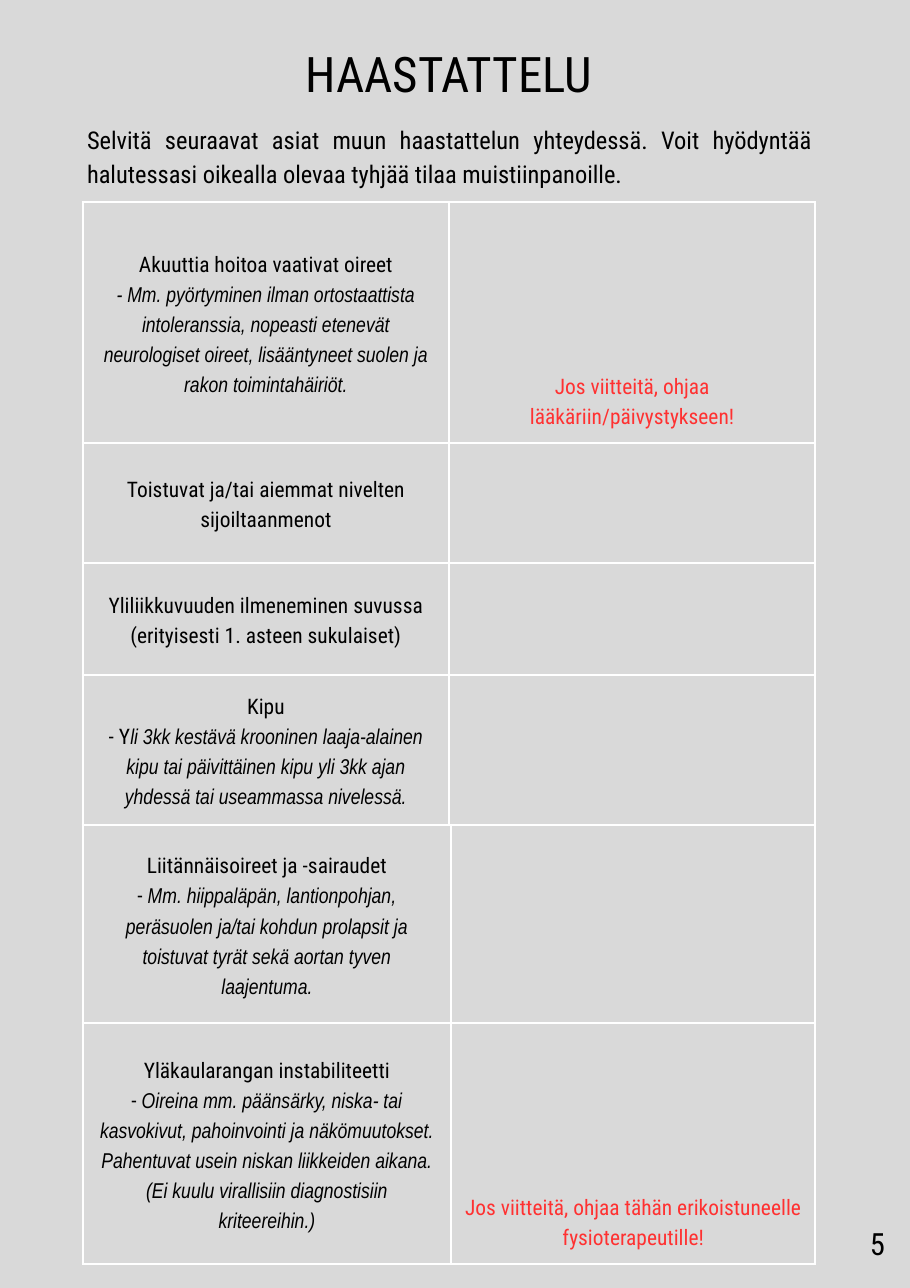
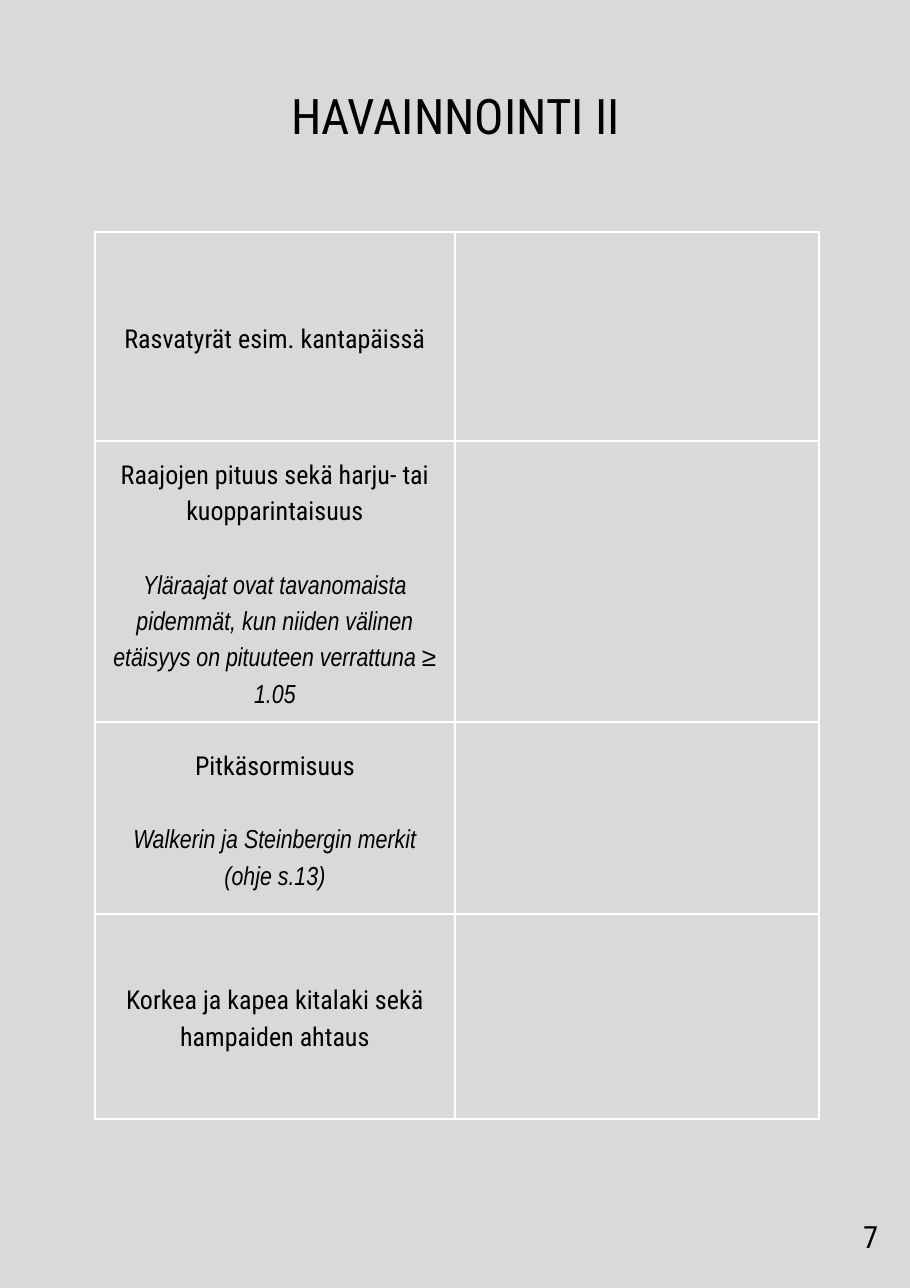
from lxml import etree
from pptx import Presentation
from pptx.dml.color import RGBColor
from pptx.enum import text
from pptx.oxml import ns
from pptx.util import Pt

GREY, WHITE, BLACK, RED = "D9D9D9", "FFFFFF", "000000", "FF3131"
UPRIGHT, SLANTED = "Roboto Condensed", "Arial Narrow"
LEADING = 1.4
CELL_MARGIN = 8.64
CENTER, JUSTIFY = text.PP_ALIGN.CENTER, text.PP_ALIGN.JUSTIFY


def write(frame, paragraphs, size, color=BLACK, align=CENTER):
    frame.word_wrap = True
    for index, (upright, slanted, gap_lines) in enumerate(paragraphs):
        para = frame.paragraphs[0] if index == 0 else frame.add_paragraph()
        para.alignment = align
        para.line_spacing = Pt(size * LEADING)
        para.space_before = Pt(size * LEADING * gap_lines)
        para.font.name = UPRIGHT
        para.font.size = Pt(size)
        para.font.color.rgb = RGBColor.from_string(color)
        if upright:
            para.add_run().text = upright
        if slanted:
            span = para.add_run()
            span.text = slanted
            span.font.name = SLANTED
            span.font.italic = True


def place(box, left, top, width, height):
    box.left, box.top, box.width, box.height = Pt(left), Pt(top), Pt(width), Pt(height)
    frame = box.text_frame
    frame.margin_left = frame.margin_right = frame.margin_top = frame.margin_bottom = 0
    frame.vertical_anchor = text.MSO_ANCHOR.TOP
    frame.auto_size = text.MSO_AUTO_SIZE.NONE
    return frame


interview_tables = [
    (54, 132.3, (239.6, 239.2), [
        (157, [("Akuuttia hoitoa vaativat oireet", "", 0),
               ("", "- Mm. pyörtyminen ilman ortostaattista intoleranssia, nopeasti etenevät "
                    "neurologiset oireet, lisääntyneet suolen ja rakon toimintahäiriöt.", 0)],
         "Jos viitteitä, ohjaa lääkäriin/päivystykseen!"),
        (78.4, [("Toistuvat ja/tai aiemmat nivelten sijoiltaanmenot", "", 0)], ""),
        (73.2, [("Yliliikkuvuuden ilmeneminen suvussa (erityisesti 1. asteen sukulaiset)", "", 0)], ""),
        (98, [("Kipu", "", 0),
              ("- Y", "li 3kk kestävä krooninen laaja-alainen kipu tai päivittäinen kipu "
                      "yli 3kk ajan yhdessä tai useammassa nivelessä.", 0)], ""),
    ]),
    (54, 538.8, (241, 237.8), [
        (129.6, [("Liitännäisoireet ja -sairaudet", "", 0),
                 ("-", " Mm. hiippaläpän, lantionpohjan, peräsuolen ja/tai kohdun prolapsit "
                       "ja toistuvat tyrät sekä aortan tyven laajentuma.", 0)], ""),
        (157.5, [("Yläkaularangan instabiliteetti", "", 0),
                 ("-", " Oireina mm. päänsärky, niska- tai kasvokivut, pahoinvointi ja "
                       "näkömuutokset. Pahentuvat usein niskan liikkeiden aikana.", 0),
                 ("", "(Ei kuulu virallisiin diagnostisiin kriteereihin.)", 0)],
         "Jos viitteitä, ohjaa tähän erikoistuneelle fysioterapeutille!"),
    ]),
]
observation_tables = [
    (62, 151.8, (235.4, 238), [
        (136.3, [("Rasvatyrät esim. kantapäissä", "", 0)], ""),
        (183.6, [("Raajojen pituus sekä harju- tai kuopparintaisuus", "", 0),
                 ("", "Yläraajat ovat tavanomaista pidemmät, kun niiden välinen "
                      "etäisyys on pituuteen verrattuna ≥ 1.05", 1)], ""),
    ]),
    (62, 471.9, (235.4, 238), [
        (125.3, [("Pitkäsormisuus", "", 0),
                 ("", "Walkerin ja Steinbergin merkit", 1),
                 ("", "(ohje s.13)", 0)], ""),
        (134, [("Korkea ja kapea kitalaki sekä hampaiden ahtaus", "", 0)], ""),
    ]),
]
intro = ("Selvitä seuraavat asiat muun haastattelun yhteydessä. Voit hyödyntää "
         "halutessasi oikealla olevaa tyhjää tilaa muistiinpanoille.")
pages = [
    ("HAASTATTELU", (40.3, 22.3), intro, interview_tables, 14, "5", (567.4, 796.3)),
    ("HAVAINNOINTI II", (44.6, 49.7), "", observation_tables, 17, "7", (563, 792)),
]

deck = Presentation()
deck.slide_width, deck.slide_height = Pt(594.72), Pt(841.68)
backdrop = deck.slide_master.background.fill
backdrop.solid()
backdrop.fore_color.rgb = RGBColor.from_string(GREY)

for heading, heading_at, lead, tables, size, number, number_at in pages:
    page = deck.slides.add_slide(deck.slide_layouts[5])
    write(place(page.shapes.title, *heading_at, 506.2, 47.5), [(heading, "", 0)], 32)
    if lead:
        box = page.shapes.add_textbox(0, 0, 0, 0)
        write(place(box, 56.9, 78.5, 473.8, 45.4), [(lead, "", 0)], 16, align=JUSTIFY)

    for left, top, widths, rows in tables:
        total_height = sum(row[0] for row in rows)
        table = page.shapes.add_table(len(rows), 2, Pt(left), Pt(top),
                                      Pt(sum(widths)), Pt(total_height)).table
        table.first_row = table.horz_banding = False
        for column, width in zip(table.columns, widths):
            column.width = Pt(width)
        for index, (height, topic, warning) in enumerate(rows):
            table.rows[index].height = Pt(height)
            topic_cell, notes_cell = table.cell(index, 0), table.cell(index, 1)
            write(topic_cell.text_frame, topic, size)
            topic_cell.vertical_anchor = text.MSO_ANCHOR.MIDDLE
            if warning:
                write(notes_cell.text_frame, [(warning, "", 0)], size, RED)
                notes_cell.vertical_anchor = text.MSO_ANCHOR.BOTTOM
        for cell in table.iter_cells():
            cell.margin_left = cell.margin_right = Pt(CELL_MARGIN)
            cell.margin_top = cell.margin_bottom = Pt(CELL_MARGIN)
            cell.fill.background()
            properties = cell._tc.get_or_add_tcPr()
            for position, side in enumerate(("lnL", "lnR", "lnT", "lnB")):
                line = etree.Element(ns.qn(f"a:{side}"), w=str(Pt(1.5)))
                paint = etree.SubElement(line, ns.qn("a:solidFill"))
                etree.SubElement(paint, ns.qn("a:srgbClr"), val=WHITE)
                properties.insert(position, line)

    box = page.shapes.add_textbox(0, 0, 0, 0)
    write(place(box, *number_at, 12.2, 28), [(number, "", 0)], 20)

deck.save("out.pptx")
